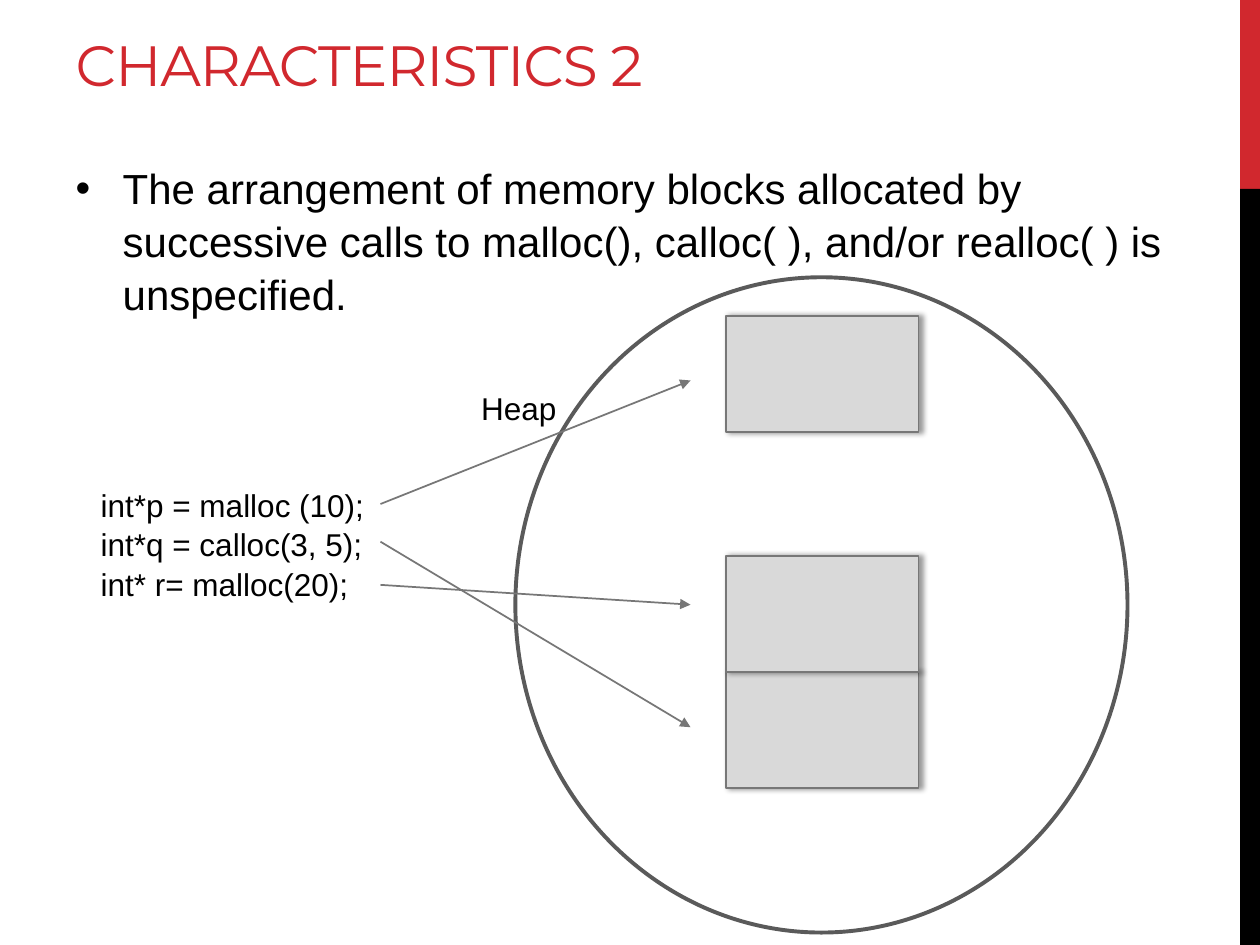
"""Builds the slide on how the heap arranges allocated memory blocks."""
from lxml import etree
from pptx import Presentation
from pptx.dml.color import RGBColor
from pptx.enum import shapes, text
from pptx.oxml import parse_xml
from pptx.oxml.ns import nsdecls, qn
from pptx import util as u

COLORS = {
    "accent": "D1282E",
    "black": "000000",
    "block": "D9D9D9",
    "outline": "777777",
    "heap": "5A5A5A",
}


class HeapSlide:
    body_font = "Arial"
    title_font = "Montserrat"

    def __init__(self, deck):
        self.slide = deck.slides.add_slide(deck.slide_layouts[1])

    def color(self, name):
        return RGBColor.from_string(COLORS[name])

    def place(self, holder, *box):
        holder.left, holder.top, holder.width, holder.height = map(u.Cm, box)
        holder.text_frame.auto_size = text.MSO_AUTO_SIZE.NONE
        return holder.text_frame

    def style(self, paragraph, size, font=body_font, color="black"):
        paragraph.alignment = text.PP_ALIGN.LEFT
        paragraph.font.size = u.Pt(size)
        paragraph.font.name = font
        paragraph.font.color.rgb = self.color(color)

    def title(self, wording, *box):
        frame = self.place(self.slide.shapes.title, *box)
        frame.vertical_anchor = text.MSO_ANCHOR.BOTTOM
        frame.text = wording
        heading = frame.paragraphs[0]
        self.style(heading, 32.4, self.title_font, "accent")
        heading.runs[0].font._element.set("spc", "-60")

    def bullet(self, wording, *box):
        frame = self.place(self.slide.placeholders[1], *box)
        frame.text = wording
        point = frame.paragraphs[0]
        properties = point._p.get_or_add_pPr()
        properties.set("marL", str(u.Cm(0.95)))
        properties.set("indent", str(u.Cm(-0.95)))
        etree.SubElement(properties, qn("a:buChar"), char="•")
        point.space_before = u.Pt(0)
        point.space_after = u.Pt(6)
        point.line_spacing = 1.05
        self.style(point, 24)

    def label(self, lines, *box):
        frame = self.slide.shapes.add_textbox(*map(u.Cm, box)).text_frame
        frame.word_wrap = False
        frame.auto_size = text.MSO_AUTO_SIZE.SHAPE_TO_FIT_TEXT
        frame.text = "\n".join(lines)
        for paragraph in frame.paragraphs:
            paragraph.line_spacing = 1.05
            self.style(paragraph, 18)

    def shape(self, kind, *box, fill=None, line=None, weight=1):
        item = self.slide.shapes.add_shape(kind, *map(u.Cm, box))
        item.shadow.inherit = False
        if fill:
            item.fill.solid()
            item.fill.fore_color.rgb = self.color(fill)
        else:
            item.fill.background()
        if line:
            item.line.color.rgb = self.color(line)
            item.line.width = u.Pt(weight)
        else:
            item.line.fill.background()
        return item

    def bar(self, top, height, fill):
        self.shape(shapes.MSO_SHAPE.RECTANGLE, 25, top, 0.4, height, fill=fill)

    def block(self, top):
        memory = self.shape(shapes.MSO_SHAPE.RECTANGLE, 14.63, top, 3.89, 2.34,
                            fill="block", line="outline")
        effects = memory._element.spPr.find(qn("a:effectLst"))
        effects.append(parse_xml(
            f'<a:outerShdw {nsdecls("a")} blurRad="{u.Pt(3.1)}" dist="{u.Pt(1.8)}"'
            f' dir="0" rotWithShape="0"><a:srgbClr val="{COLORS["black"]}">'
            '<a:alpha val="40000"/></a:srgbClr></a:outerShdw>'))

    def arrow(self, start, end):
        pointer = self.slide.shapes.add_connector(
            shapes.MSO_CONNECTOR.STRAIGHT, *map(u.Cm, (7.67, start, 13.92, end)))
        pointer.line.color.rgb = self.color("outline")
        pointer.line.width = u.Pt(1)
        etree.SubElement(pointer.line._get_or_add_ln(), qn("a:tailEnd"), type="triangle")
        etree.SubElement(pointer._element.spPr, qn("a:effectLst"))


def main():
    deck = Presentation()
    deck.slide_width, deck.slide_height = u.Cm(25.4), u.Cm(19.05)
    heap = HeapSlide(deck)
    heap.bar(0, 3.81, "accent")
    heap.bar(3.81, 15.24, "black")
    heap.title("CHARACTERISTICS 2", 1.27, 0.43, 22.91, 1.68)
    heap.bullet("The arrangement of memory blocks allocated by successive calls to "
                "malloc(), calloc( ), and/or realloc( ) is unspecified.",
                1.27, 3.1, 22.91, 14.71)
    for top in (6.37, 13.55, 11.21):
        heap.block(top)
    heap.shape(shapes.MSO_SHAPE.OVAL, 10.39, 5.59, 12.34, 13.21,
               line="heap", weight=2.25)
    heap.label(["Heap"], 9.45, 7.67, 2.06, 1.02)
    heap.label(["int*p = malloc (10);", "int*q = calloc(3, 5);", "int* r= malloc(20);"],
               1.78, 9.63, 5.87, 2.57)
    for start, end in ((10.16, 7.67), (10.92, 14.66), (11.79, 12.19)):
        heap.arrow(start, end)
    deck.save("out.pptx")


if __name__ == "__main__":
    main()
